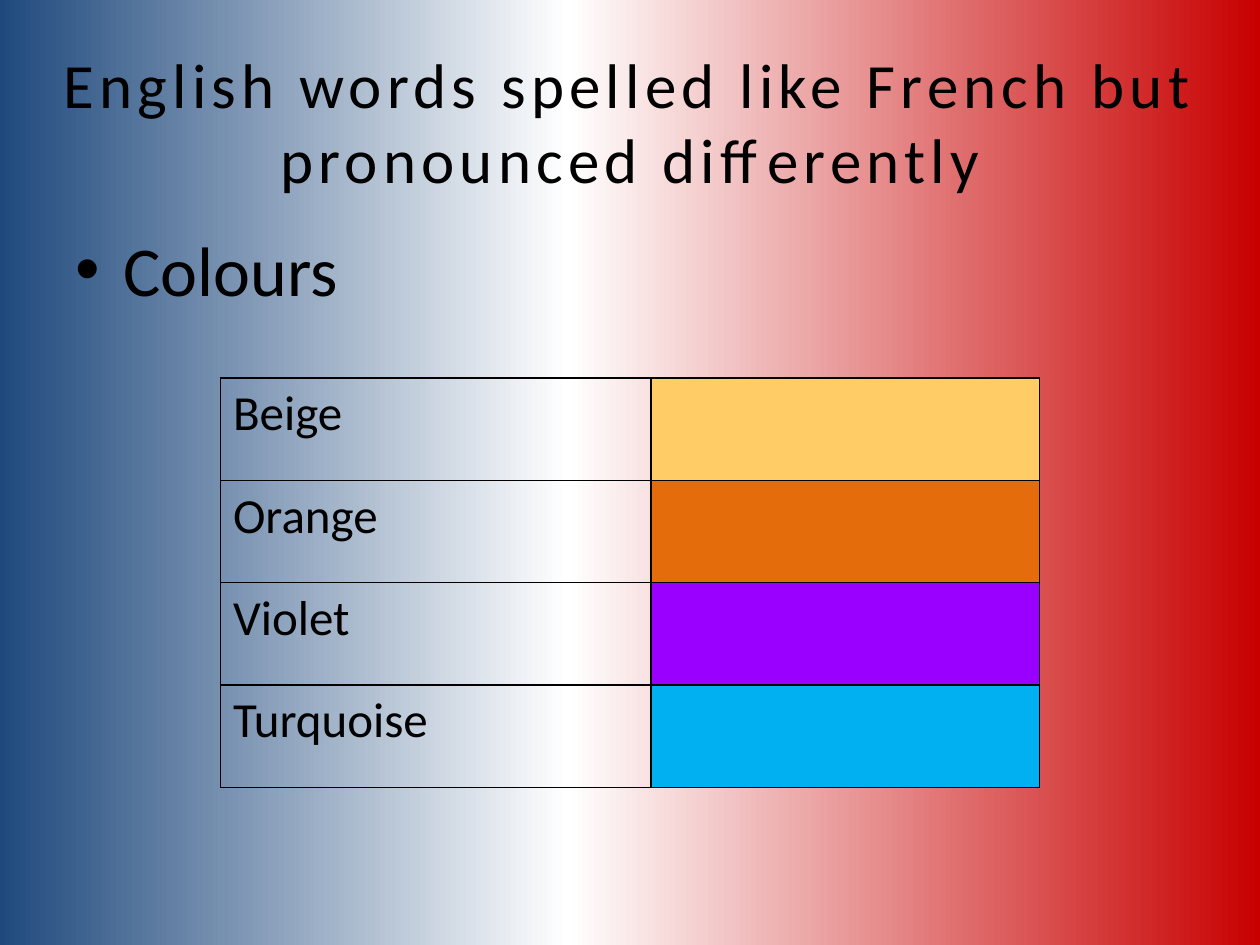
from copy import deepcopy
from dataclasses import dataclass

from lxml import etree
from pptx import Presentation, util as u
from pptx.dml.color import RGBColor
from pptx.enum import text
from pptx.oxml import ns


@dataclass(frozen=True)
class Theme:
    font: str = "Calibri"
    ink: str = "000000"
    title_size: int = 36
    body_size: int = 40
    table_size: int = 28
    letter_spacing: int = 3
    border_width: int = 1
    background: tuple = ((0, "1F497D"), (0.45, "FFFFFF"), (1, "C80000"))


COLOURS = {
    "Beige": "FFCC66",
    "Orange": "E46C0A",
    "Violet": "9900FF",
    "Turquoise": "00B0F0",
}


class SlideBuilder:
    """Places elements on a grid of 120 columns by 90 rows."""

    columns, rows = 120, 90

    def __init__(self, presentation, theme):
        self.theme = theme
        self.slide = presentation.slides.add_slide(presentation.slide_layouts[6])
        self.column = presentation.slide_width // self.columns
        self.row = presentation.slide_height // self.rows

    def place(self, left, top, width, height):
        return (int(left * self.column), int(top * self.row),
                int(width * self.column), int(height * self.row))

    def style(self, paragraph, size):
        paragraph.font.name = self.theme.font
        paragraph.font.size = u.Pt(size)
        paragraph.font.color.rgb = RGBColor.from_string(self.theme.ink)

    def background(self):
        fill = self.slide.background.fill
        fill.gradient()
        fill.gradient_angle = 0
        stop_list = next(self.slide.element.iter(ns.qn("a:gsLst")))
        stop_list.append(deepcopy(stop_list[-1]))
        for stop, (position, colour) in zip(fill.gradient_stops, self.theme.background):
            stop.position = position
            stop.color.rgb = RGBColor.from_string(colour)

    def text_box(self, words, area, size):
        frame = self.slide.shapes.add_textbox(*self.place(*area)).text_frame
        frame.word_wrap = True
        paragraph = frame.paragraphs[0]
        paragraph.text = words
        self.style(paragraph, size)
        return frame, paragraph

    def title(self, words, area):
        frame, paragraph = self.text_box(words, area, self.theme.title_size)
        frame.vertical_anchor = text.MSO_ANCHOR.MIDDLE
        paragraph.alignment = text.PP_ALIGN.CENTER
        spacing = str(self.theme.letter_spacing * 100)
        paragraph.runs[0].font._element.set("spc", spacing)

    def bullet(self, words, area):
        _, paragraph = self.text_box(words, area, self.theme.body_size)
        properties = paragraph._p.get_or_add_pPr()
        indent = u.Inches(0.38)
        properties.set("marL", str(indent))
        properties.set("indent", str(-indent))
        font = etree.Element(ns.qn("a:buFont"), typeface="Arial")
        mark = etree.Element(ns.qn("a:buChar"), char="•")
        properties.insert(0, font)
        font.addnext(mark)

    def cell_border(self, cell):
        properties = cell._tc.get_or_add_tcPr()
        for side in ("lnL", "lnR", "lnT", "lnB"):
            line = etree.SubElement(properties, ns.qn(f"a:{side}"),
                                    w=str(u.Pt(self.theme.border_width)))
            fill = etree.SubElement(line, ns.qn("a:solidFill"))
            etree.SubElement(fill, ns.qn("a:srgbClr"), val=self.theme.ink)

    def colour_table(self, colours, area, column_widths):
        """Lists each colour's name beside a cell filled with it."""
        table = self.slide.shapes.add_table(
            len(colours), 2, *self.place(*area)).table
        table.first_row = table.horz_banding = False
        for column, width in zip(table.columns, column_widths):
            column.width = width * self.column
        for row, (name, colour) in zip(table.rows, colours.items()):
            label, swatch = row.cells
            for cell in (label, swatch):
                self.cell_border(cell)
            label.text = name
            label.fill.background()
            self.style(label.text_frame.paragraphs[0], self.theme.table_size)
            swatch.fill.solid()
            swatch.fill.fore_color.rgb = RGBColor.from_string(colour)


def main():
    presentation = Presentation()
    presentation.slide_width = u.Inches(10)
    presentation.slide_height = u.Inches(7.5)
    builder = SlideBuilder(presentation, Theme())
    builder.background()
    builder.title("English words spelled like French but pronounced differently",
                  (4, 4, 112, 15))
    builder.bullet("Colours", (6, 21, 108, 59.4))
    builder.colour_table(COLOURS, (21, 36, 78, 39), (41, 37))
    presentation.save("out.pptx")


if __name__ == "__main__":
    main()
